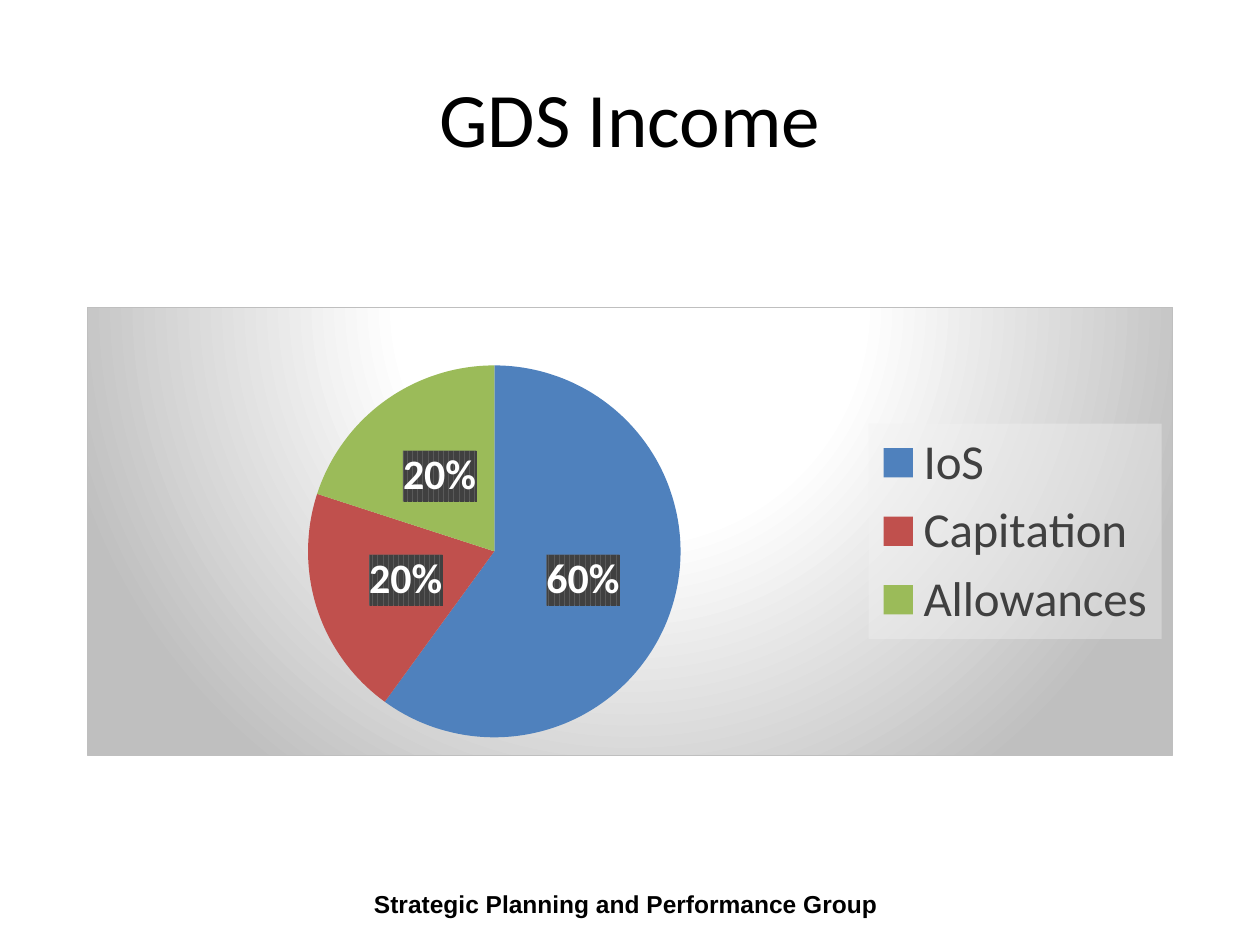
"""Build the GDS Income slide with its pie chart."""
import lxml.etree
import pptx
import pptx.chart.data
import pptx.dml.color
import pptx.enum.chart
import pptx.enum.text
import pptx.oxml
import pptx.oxml.ns
import pptx.util
from dataclasses import dataclass

Cm, Pt = pptx.util.Cm, pptx.util.Pt
qn = pptx.oxml.ns.qn

TITLE = "GDS Income"
FOOTER = "Strategic Planning and Performance Group"
INCOME = {"IoS": 60, "Capitation": 20, "Allowances": 20}
TITLE_BOX = (1.27, 0.76, 22.86, 3.18)
FOOTER_BOX = (7.29, 17.7, 11.81, 1.02)
CHART_BOX = (1.75, 6.18, 21.9, 9.06)
PIE_AREA = (0.2, 0.13, 0.35, 0.83)
LEGEND_AREA = (0.72, 0.26, 0.27, 0.48)


@dataclass(frozen=True)
class Theme:
    body: str = "Calibri"
    footer: str = "Arial"
    text: str = "000000"
    legend: str = "404040"
    label: str = "FFFFFF"
    label_dark: str = "404040"
    label_mid: str = "595959"
    panel: str = "F2F2F2"
    light: str = "FFFFFF"
    edge: str = "BFBFBF"
    slices: tuple = ("4F81BD", "C0504D", "9BBB59")
    title_size: int = 44
    footer_size: int = 14
    legend_size: int = 28
    label_size: int = 24
    chart_size: int = 10


THEME = Theme()


def rgb(value):
    return pptx.dml.color.RGBColor.from_string(value)


def style(font, name, size, color, bold=False):
    font.name, font.size, font.bold = name, Pt(size), bold
    font.color.rgb = rgb(color)


def add_text(s, box, text, name, size, bold=False, align=None):
    tf = s.shapes.add_textbox(*map(Cm, box)).text_frame
    tf.word_wrap = True
    tf.vertical_anchor = pptx.enum.text.MSO_ANCHOR.MIDDLE
    tf.text = text
    p = tf.paragraphs[0]
    p.alignment = align
    style(p.runs[0].font, name, size, THEME.text, bold)


def chart_xml(tag, body):
    spaces = pptx.oxml.ns.nsdecls("c", "a")
    return pptx.oxml.parse_xml(f"<c:{tag} {spaces}>{body}</c:{tag}>")


def color_xml(value, extra=""):
    return f'<a:srgbClr val="{value}">{extra}</a:srgbClr>'


def layout_xml(area, inner=False):
    target = '<c:layoutTarget val="inner"/>' if inner else ""
    modes = "".join(f'<c:{k}Mode val="edge"/>' for k in "xy")
    sizes = "".join(f'<c:{k} val="{v}"/>' for k, v in zip("xywh", area))
    return chart_xml("layout", f"<c:manualLayout>{target}{modes}{sizes}</c:manualLayout>")


def drop_layout(parent):
    for old in parent.findall(qn("c:layout")):
        parent.remove(old)


def backdrop_xml():
    stops = "".join(
        f'<a:gs pos="{pos * 1000}">{color_xml(c)}</a:gs>'
        for pos, c in ((0, THEME.light), (39, THEME.light), (100, THEME.edge))
    )
    return chart_xml(
        "spPr",
        f"<a:gradFill><a:gsLst>{stops}</a:gsLst>"
        '<a:path path="circle"><a:fillToRect l="50000" t="-80000" r="50000" b="180000"/>'
        f'</a:path></a:gradFill><a:ln w="{Pt(0.75)}"><a:solidFill>'
        f"{color_xml(THEME.edge)}</a:solidFill></a:ln>",
    )


def add_income_chart(s):
    data = pptx.chart.data.CategoryChartData(number_format="General")
    data.categories = list(INCOME)
    data.add_series("Series 1", list(INCOME.values()))
    kind = pptx.enum.chart.XL_CHART_TYPE.PIE
    chart = s.shapes.add_chart(kind, *map(Cm, CHART_BOX), data).chart
    chart.has_title = False
    style(chart.font, THEME.body, THEME.chart_size, THEME.text)
    space = chart.element
    space.find(qn("c:chart")).addnext(backdrop_xml())
    area = space.find(".//" + qn("c:plotArea"))
    drop_layout(area)
    area.insert(0, layout_xml(PIE_AREA, inner=True))

    plot = chart.plots[0]
    plot.vary_by_categories = True
    for i, color in enumerate(THEME.slices):
        fill = plot.series[0].points[i].format.fill
        fill.solid()
        fill.fore_color.rgb = rgb(color)

    labels = plot.series[0].data_labels
    labels.show_percentage = True
    labels.show_value = False
    labels.show_legend_key = False
    labels.number_format = "0%"
    labels.number_format_is_linked = False
    labels.position = pptx.enum.chart.XL_LABEL_POSITION.CENTER
    style(labels.font, THEME.body, THEME.label_size, THEME.label, True)
    pattern = (
        f'<a:pattFill prst="dkVert"><a:fgClr>{color_xml(THEME.label_dark)}</a:fgClr>'
        f"<a:bgClr>{color_xml(THEME.label_mid)}</a:bgClr></a:pattFill>"
    )
    label_text = plot.series[0]._element.find(qn("c:dLbls")).find(qn("c:txPr"))
    label_text.addprevious(chart_xml("spPr", pattern))

    chart.has_legend = True
    legend = chart.legend
    legend.position = pptx.enum.chart.XL_LEGEND_POSITION.RIGHT
    legend.include_in_layout = False
    style(legend.font, THEME.body, THEME.legend_size, THEME.legend)
    node = space.find(".//" + qn("c:legend"))
    drop_layout(node)
    node.find(qn("c:overlay")).addprevious(layout_xml(LEGEND_AREA))
    panel = color_xml(THEME.panel, '<a:alpha val="39000"/>')
    node.find(qn("c:txPr")).addprevious(
        chart_xml("spPr", f"<a:solidFill>{panel}</a:solidFill>")
    )


def main():
    prs = pptx.Presentation()
    prs.slide_width, prs.slide_height = Cm(25.4), Cm(19.05)
    s = prs.slides.add_slide(prs.slide_layouts[6])
    add_text(s, FOOTER_BOX, FOOTER, THEME.footer, THEME.footer_size, bold=True)
    center = pptx.enum.text.PP_ALIGN.CENTER
    add_text(s, TITLE_BOX, TITLE, THEME.body, THEME.title_size, align=center)
    add_income_chart(s)
    prs.save("out.pptx")


if __name__ == "__main__":
    main()
